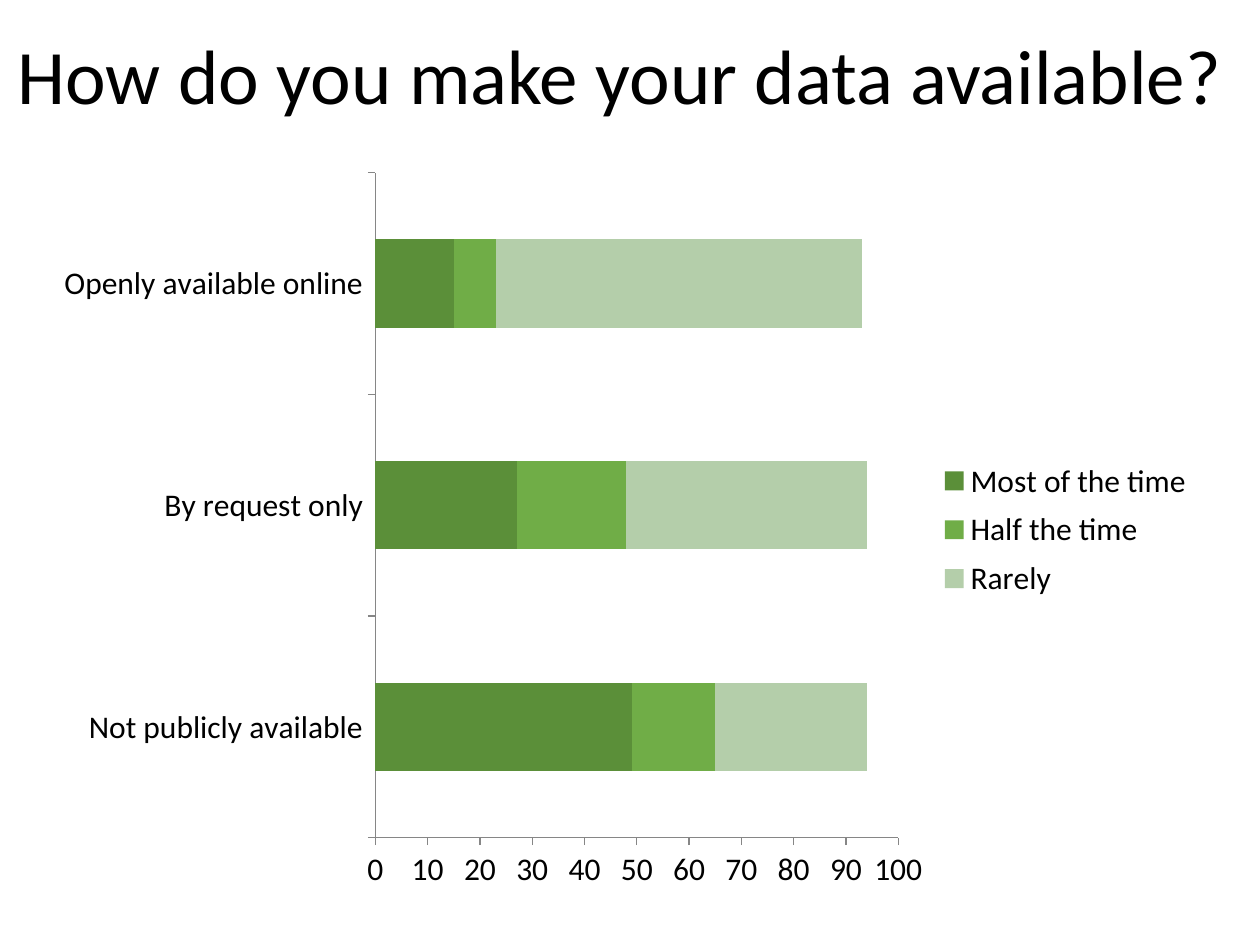
import pptx
import pptx.chart.data
import pptx.dml.color
import pptx.enum.chart
import pptx.enum.shapes
import pptx.enum.text
import pptx.oxml
import pptx.util
from pptx.util import Inches

# Content
TITLE = "How do you make your data available?"
CATEGORIES = ["Not publicly available", "By request only", "Openly available online"]
SERIES = [
    ("Most of the time", (49, 27, 15), "5B8F39"),
    ("Half the time", (16, 21, 8), "70AD47"),
    ("Rarely", (29, 46, 70), "B4CEAA"),
]

# Places on the slide in inches: left, top, width, height
TITLE_BOX = (0.14, 0.3, 9.75, 1.25)
CHART_BOX = (0.33, 1.25, 9.33, 5.92)
PLOT_BOX = (2.98, 1.37, 4.15, 5.28)
LEGEND_BOX = (7.43, 3.58, 2.05, 1.25)


def color(value):
    return pptx.dml.color.RGBColor.from_string(value)


def style_font(font, size):
    font.name = "Calibri"
    font.size = pptx.util.Pt(size)
    font.bold = False
    font.color.rgb = color("000000")


def chart_layout(box, target=""):
    """Manual layout XML for a part of the chart, as shares of its frame."""
    left, top, width, height = CHART_BOX
    shares = {
        "x": (box[0] - left) / width,
        "y": (box[1] - top) / height,
        "w": box[2] / width,
        "h": box[3] / height,
    }
    sizes = "".join(f'<c:{key} val="{share:.4f}"/>' for key, share in shares.items())
    return pptx.oxml.parse_xml(
        '<c:layout xmlns:c="http://schemas.openxmlformats.org/drawingml/2006/chart">'
        f'<c:manualLayout>{target}<c:xMode val="edge"/><c:yMode val="edge"/>{sizes}'
        "</c:manualLayout></c:layout>"
    )


def drop_layout(part):
    for old in part.xpath("c:layout"):
        part.remove(old)


deck = pptx.Presentation()
deck.slide_width, deck.slide_height = Inches(10), Inches(7.5)
page = deck.slides.add_slide(deck.slide_layouts[6])

# Title
title = page.shapes.add_shape(
    pptx.enum.shapes.MSO_SHAPE.ROUNDED_RECTANGLE, *map(Inches, TITLE_BOX))
title.adjustments[0] = 0
title.shadow.inherit = False
title.fill.background()
title.line.fill.background()
frame = title.text_frame
frame.text = TITLE
frame.word_wrap = True
frame.vertical_anchor = pptx.enum.text.MSO_ANCHOR.TOP
frame.margin_left = frame.margin_right = frame.margin_top = frame.margin_bottom = 0
para = frame.paragraphs[0]
para.alignment = pptx.enum.text.PP_ALIGN.LEFT
para.line_spacing = 0.9
style_font(para.font, 44)

# Stacked bar chart
data = pptx.chart.data.CategoryChartData()
data.categories = CATEGORIES
for name, values, _ in SERIES:
    data.add_series(name, values)
chart = page.shapes.add_chart(
    pptx.enum.chart.XL_CHART_TYPE.BAR_STACKED, *map(Inches, CHART_BOX), data).chart
style_font(chart.font, 18)
chart.has_title = False
chart.has_legend = True
chart.legend.position = pptx.enum.chart.XL_LEGEND_POSITION.RIGHT
chart.legend.include_in_layout = False

plot = chart.plots[0]
plot.gap_width, plot.overlap = 150, 100
plot.vary_by_categories = False
for series, (_, _, fill) in zip(plot.series, SERIES):
    series.format.fill.solid()
    series.format.fill.fore_color.rgb = color(fill)

# Axes
for axis in (chart.category_axis, chart.value_axis):
    axis.has_major_gridlines = False
    axis.major_tick_mark = pptx.enum.chart.XL_TICK_MARK.OUTSIDE
    axis.minor_tick_mark = pptx.enum.chart.XL_TICK_MARK.NONE
    axis.format.line.color.rgb = color("868686")
    axis.format.line.width = pptx.util.Pt(0.75)
chart.value_axis.minimum_scale, chart.value_axis.maximum_scale = 0, 100
chart.value_axis.major_unit = 10

# Fixed plot area and legend, which python-pptx has no method for
plot_area = chart._chartSpace.chart.plotArea
drop_layout(plot_area)
plot_area.insert(0, chart_layout(PLOT_BOX, '<c:layoutTarget val="inner"/>'))
legend = chart._chartSpace.chart.legend
drop_layout(legend)
legend.xpath("c:legendPos")[0].addnext(chart_layout(LEGEND_BOX))

deck.save("out.pptx")
